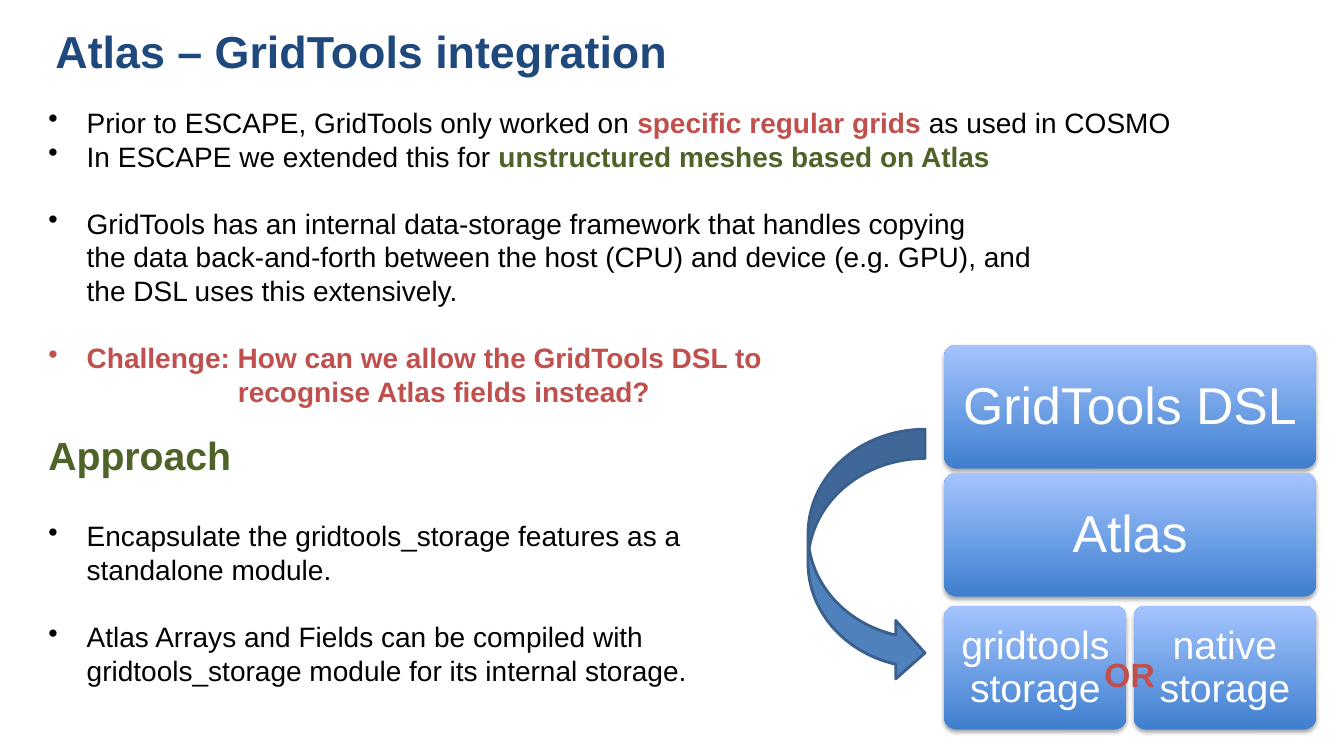
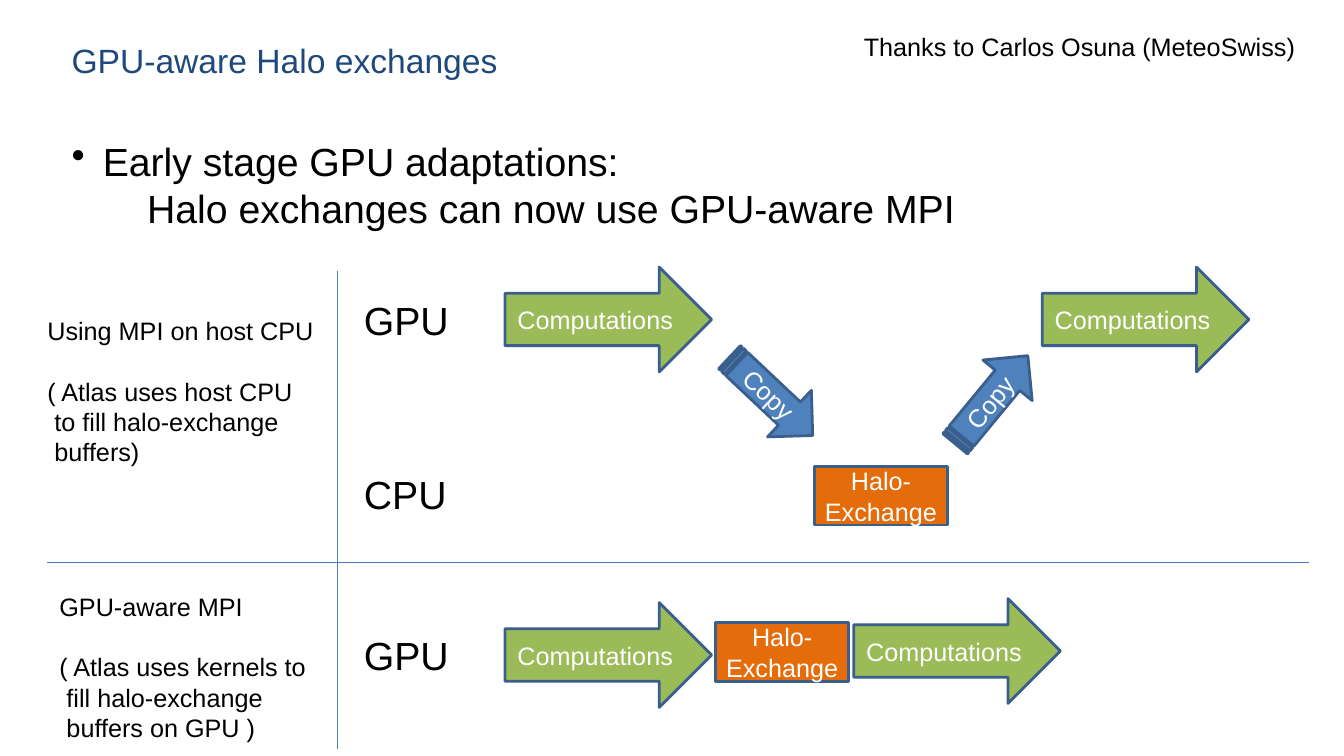
from lxml import etree
from pptx import Presentation
from pptx.dml.color import RGBColor
from pptx.enum.shapes import MSO_CONNECTOR, MSO_SHAPE
from pptx.enum.text import MSO_ANCHOR, PP_ALIGN
from pptx.oxml.ns import qn
from pptx.util import Inches, Pt

# Shared look
HUES = {
    "navy": "1F497D", "black": "000000", "white": "FFFFFF", "red": "C0504D",
    "olive": "4F6228", "blue": "4F81BD", "edge": "3A5F8C", "rule": "4B7EBC",
    "green": "9BBB59", "orange": "E46C0A", "deep": "3F7FCE", "pale": "A4C4FF",
}
FACE = "Arial"
LEAD = 1.2
WIDE, HIGH = Inches(13.33), Inches(7.5)
UNIT = WIDE / 40  # the grid has 40 columns and 22.5 rows

CARD = MSO_SHAPE.ROUNDED_RECTANGLE
BLOCK = MSO_SHAPE.RECTANGLE
ARROW = MSO_SHAPE.RIGHT_ARROW
STRIPE = MSO_SHAPE.STRIPED_RIGHT_ARROW
CURVE = MSO_SHAPE.CURVED_RIGHT_ARROW
LINE = MSO_CONNECTOR.STRAIGHT
MID, TOP = MSO_ANCHOR.MIDDLE, MSO_ANCHOR.TOP
CENTER, LEFT = PP_ALIGN.CENTER, PP_ALIGN.LEFT

# Kinds of step in a lane: shape, fill, width, height
STEPS = {
    "Computations": (ARROW, "green", 6.15, 3.12),
    "Copy": (STRIPE, "blue", 3.4, 1.9),
    "Halo-Exchange": (BLOCK, "orange", 3.96, 1.74),
}


def rgb(hue):
    return RGBColor.from_string(HUES[hue])


def grid(*vals):
    return [round(v * UNIT) for v in vals]


def shift(box, x, y):
    return box[0] + x, box[1] + y


def put(item, **vals):
    for key, val in vals.items():
        setattr(item, key, val)


def para(text, size, hue="black", bold=False, dot=False, left=0, gap=0):
    """Text is a string, or a list of (string, hue, bold) runs."""
    runs = [(text, hue, bold)] if isinstance(text, str) else text
    return {"runs": runs, "size": size, "dot": dot, "left": left, "gap": gap}


def write(shape, paras, align=LEFT, anchor=TOP, pad=0, lead=LEAD):
    frame = shape.text_frame
    put(frame, word_wrap=True, vertical_anchor=anchor, margin_left=pad,
        margin_right=pad, margin_top=pad, margin_bottom=pad)
    for num, item in enumerate(paras):
        par = frame.add_paragraph() if num else frame.paragraphs[0]
        props = par._p.get_or_add_pPr()
        left = Inches(item["left"])
        props.set("marL", str(left))
        props.set("indent", str(-left if item["dot"] else 0))
        if item["dot"]:
            etree.SubElement(props, qn("a:buChar")).set("char", "•")
        size = item["size"]
        put(par, alignment=align, line_spacing=Pt(size * lead))
        if item["gap"]:
            par.space_before = Pt(item["gap"])
        for text, hue, bold in item["runs"]:
            for row, part in enumerate(text.split("\n")):
                if row:
                    par.add_line_break()
                run = par.add_run()
                run.text = part
                put(run.font, name=FACE, size=Pt(size), bold=bold)
                run.font.color.rgb = rgb(hue)


def label(slide, box, *paras):
    write(slide.shapes.add_textbox(*grid(*box)), paras)


def solid(slide, kind, box, hue):
    shape = slide.shapes.add_shape(kind, *grid(*box))
    shape.shadow.inherit = False
    shape.fill.solid()
    shape.fill.fore_color.rgb = rgb(hue)
    shape.line.color.rgb = rgb("edge")
    shape.line.width = Pt(2)
    return shape


def title(slide, spot, text, size, bold):
    label(slide, (*spot, 22, 2.4), para(text, size, "navy", bold))


def rule(slide, *ends):
    line = slide.shapes.add_connector(LINE, *grid(*ends))
    line.line.color.rgb = rgb("rule")
    line.line.width = Pt(0.75)
    etree.SubElement(line._element.spPr, qn("a:effectLst"))


# Slide 1 regions
def points(slide, box):
    dots = {"size": 20, "dot": True, "left": 0.38}
    label(
        slide, box,
        para([("Prior to ESCAPE, GridTools only worked on ", "black", False),
              ("specific regular grids ", "red", True),
              ("as used in COSMO", "black", False)], **dots),
        para([("In ESCAPE we extended this for ", "black", False),
              ("unstructured meshes based on Atlas", "olive", True)], **dots),
        para("GridTools has an internal data-storage framework that handles copying\n"
             "the data back-and-forth between the host (CPU) and device (e.g. GPU), and\n"
             "the DSL uses this extensively.", gap=24, **dots),
        para("Challenge: How can we allow the GridTools DSL to",
             hue="red", bold=True, gap=24, **dots),
        para("recognise Atlas fields instead?", 20, "red", True, left=1.88),
        para("Approach", 28, "olive", True, gap=16.8),
        para("Encapsulate the gridtools_storage features as a\n"
             "standalone module.", gap=28.8, **dots),
        para("Atlas Arrays and Fields can be compiled with\n"
             "gridtools_storage module for its internal storage.", gap=24, **dots),
    )


def card(slide, box, text, size):
    shape = slide.shapes.add_shape(CARD, *grid(*box))
    shape.adjustments[0] = 0.1
    shape.line.fill.background()
    shape.fill.gradient()
    shape.fill.gradient_angle = 90
    for stop, hue in zip(shape.fill.gradient_stops, ("deep", "pale")):
        stop.color.rgb = rgb(hue)
    # Soft shadow below the card
    shape.shadow.inherit = False
    soft = etree.SubElement(shape._element.spPr.find(qn("a:effectLst")),
                            qn("a:outerShdw"))
    for key, val in {"blurRad": Pt(3.1), "dist": Pt(1.8), "dir": 5400000,
                     "rotWithShape": 0}.items():
        soft.set(key, str(val))
    tint = etree.SubElement(soft, qn("a:srgbClr"))
    tint.set("val", HUES["black"])
    etree.SubElement(tint, qn("a:alpha")).set("val", "35000")
    write(shape, [para(text, size, "white")], CENTER, MID, Inches(0.05), 1.08)


def stack(slide, box):
    wide, high, half = box[2], 3.69, 5.43
    for x, y, w, text, size in (
        (0, 0, wide, "GridTools DSL", 37),
        (0, 3.81, wide, "Atlas", 37),
        (0, 7.77, half, "gridtools\nstorage", 28),
        (wide - half, 7.77, half, "native\nstorage", 28),
    ):
        card(slide, (*shift(box, x, y), w, high), text, size)
    solid(slide, CURVE, (*shift(box, -4.05, 2.52), 3.48, 7.53), "blue")
    label(slide, (*shift(box, 4.77, 9.21), 2, 1.2), para("OR", 24, "red", True))


# Slide 2 regions
def lane(slide, box, note, names, steps):
    """One way of working: a note, row names and steps (text, x, y, turn)."""
    x, y, head, first, rest = note
    label(slide, (*shift(box, x, y), 8.4, 4.6),
          para(head, 18), para(first, 18, gap=21.6),
          *[para(text, 18, left=0.07) for text in rest])
    for text, y in names:
        label(slide, (*shift(box, 10.83, y), 3, 1.4), para(text, 28))
    for text, x, y, turn in steps:
        kind, hue, wide, high = STEPS[text]
        shape = solid(slide, kind, (*shift(box, x, y), wide, high), hue)
        shape.rotation = turn
        write(shape, [para(text, 18, "white")], CENTER, MID, Inches(0.05))


def intro(slide, box):
    label(slide, box,
          para("Early stage GPU adaptations:", 28, dot=True, left=0.31),
          para("Halo exchanges can now use GPU-aware MPI", 28, left=0.75))


def storage(slide):
    title(slide, (1.65, 0.7), "Atlas – GridTools integration", 32, True)
    points(slide, (1.44, 3.14, 34.5, 18))
    stack(slide, (28.1, 10.26, 11.07, 11.46))


def halo(slide):
    title(slide, (2.13, 1.2), "GPU-aware Halo exchanges", 24, False)
    label(slide, (25.71, 0.93, 13.4, 1),
          para("Thanks to Carlos Osuna (MeteoSwiss)", 18))
    intro(slide, (2.13, 4.08, 30, 3))
    lane(slide, (0, 7.95),
         (1.41, 1.44, "Using MPI on host CPU", "( Atlas uses host CPU",
          ("to fill halo-exchange", "buffers)")),
         (("GPU", 0.87), ("CPU", 6.06)),
         (("Computations", 15.03, 0, 0), ("Copy", 21.25, 2.9, 43.3),
          ("Halo-Exchange", 24.24, 5.94, 0), ("Copy", 27.81, 3, 309.5),
          ("Computations", 31.02, 0, 0)))
    lane(slide, (0, 17.6),
         (1.77, 0, "GPU-aware MPI", "( Atlas uses kernels to",
          ("fill halo-exchange", "buffers on GPU )")),
         (("GPU", 1.18),),
         (("Computations", 15.03, 0.34, 0), ("Halo-Exchange", 21.3, 0.94, 0),
          ("Computations", 25.41, 0.22, 0)))
    rule(slide, 1.41, 16.74, 38.97, 16.74)
    rule(slide, 10.04, 8.07, 10.04, 22.29)


def main():
    deck = Presentation()
    put(deck, slide_width=WIDE, slide_height=HIGH)
    for build in (storage, halo):
        build(deck.slides.add_slide(deck.slide_layouts[6]))
    deck.save("out.pptx")


if __name__ == "__main__":
    main()
